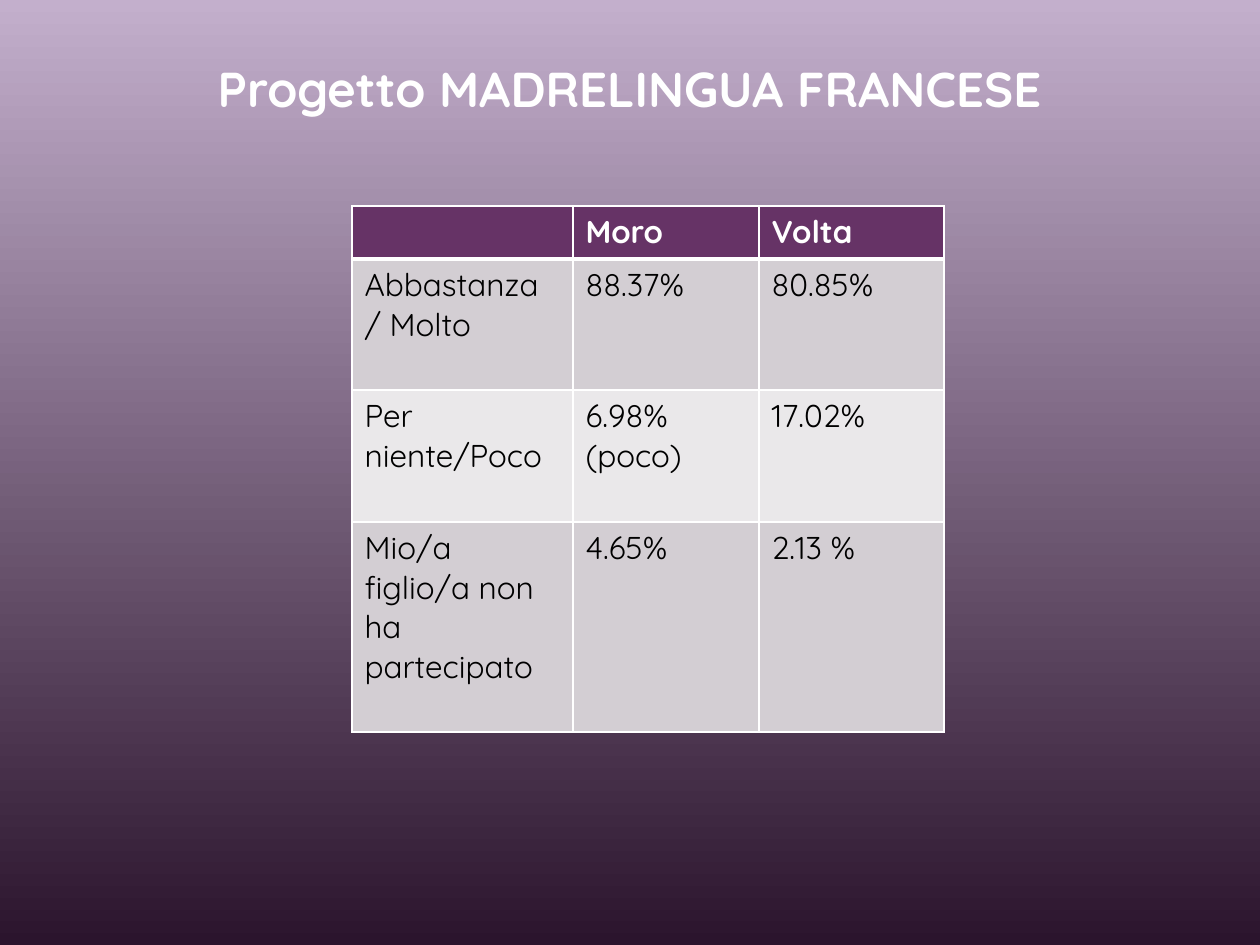
from lxml import etree
from pptx import Presentation
from pptx import util as u
from pptx.dml.color import RGBColor
from pptx.enum import text
from pptx.oxml.ns import qn

PX = 914400 / 126
FONT = "Quicksand"
COLORS = {
    "top": "C3AFCC",
    "bottom": "2B142D",
    "header": "663366",
    "odd": "D3CED3",
    "even": "EAE8EA",
    "white": "FFFFFF",
    "black": "000000",
}


def add_run(p, words, size, color, bold):
    r = p.add_run()
    r.text = words
    r.font.name = FONT
    r.font.size = u.Pt(size)
    r.font.bold = bold
    r.font.color.rgb = RGBColor.from_string(COLORS[color])


def set_borders(cell, widths):
    tcPr = cell._tc.get_or_add_tcPr()
    for i, (side, width) in enumerate(widths.items()):
        ln = etree.Element(qn("a:ln" + side), w=str(u.Pt(width)))
        fill = etree.SubElement(ln, qn("a:solidFill"))
        etree.SubElement(fill, qn("a:srgbClr"), val=COLORS["white"])
        tcPr.insert(i, ln)


prs = Presentation()
prs.slide_width = int(1260 * PX)
prs.slide_height = int(945 * PX)
s = prs.slides.add_slide(prs.slide_layouts[6])

bg = s.background.fill
bg.gradient()
bg.gradient_angle = 270
for stop, name, position in zip(bg.gradient_stops, ("top", "bottom"), (0, 1)):
    stop.color.rgb = RGBColor.from_string(COLORS[name])
    stop.position = position

title = s.shapes.add_textbox(*(int(v * PX) for v in (107, 12, 1045, 158)))
tf = title.text_frame
tf.word_wrap = True
tf.vertical_anchor = text.MSO_ANCHOR.MIDDLE
p = tf.paragraphs[0]
p.alignment = text.PP_ALIGN.CENTER
p.line_spacing = 0.95
add_run(p, "Progetto MADRELINGUA FRANCESE", 28, "white", True)

rows = [
    ["", "Moro", "Volta"],
    ["Abbastanza / Molto", "88.37%", "80.85%"],
    ["Per niente/Poco", "6.98%\n(poco)", "17.02%"],
    ["Mio/a figlio/a non ha partecipato", "4.65%", "2.13 %"],
]
col_widths = [221, 186, 185]
row_heights = [53, 131, 132, 210]

frame = s.shapes.add_table(
    len(rows), len(col_widths),
    *(int(v * PX) for v in (352, 206, sum(col_widths), sum(row_heights))),
)
table = frame.table
for col, width in zip(table.columns, col_widths):
    col.width = int(width * PX)
for row, height in zip(table.rows, row_heights):
    row.height = int(height * PX)

for i, row in enumerate(rows):
    header = i == 0
    fill = "header" if header else "odd" if i % 2 else "even"
    for j, value in enumerate(row):
        cell = table.cell(i, j)
        cell.fill.solid()
        cell.fill.fore_color.rgb = RGBColor.from_string(COLORS[fill])
        set_borders(cell, {"L": 1, "R": 1, "T": 3 if i == 1 else 1, "B": 3 if header else 1})
        tf = cell.text_frame
        for k, line in enumerate(value.split("\n")):
            p = tf.add_paragraph() if k else tf.paragraphs[0]
            if line:
                add_run(p, line, 18, "white" if header else "black", header)

prs.save("out.pptx")
